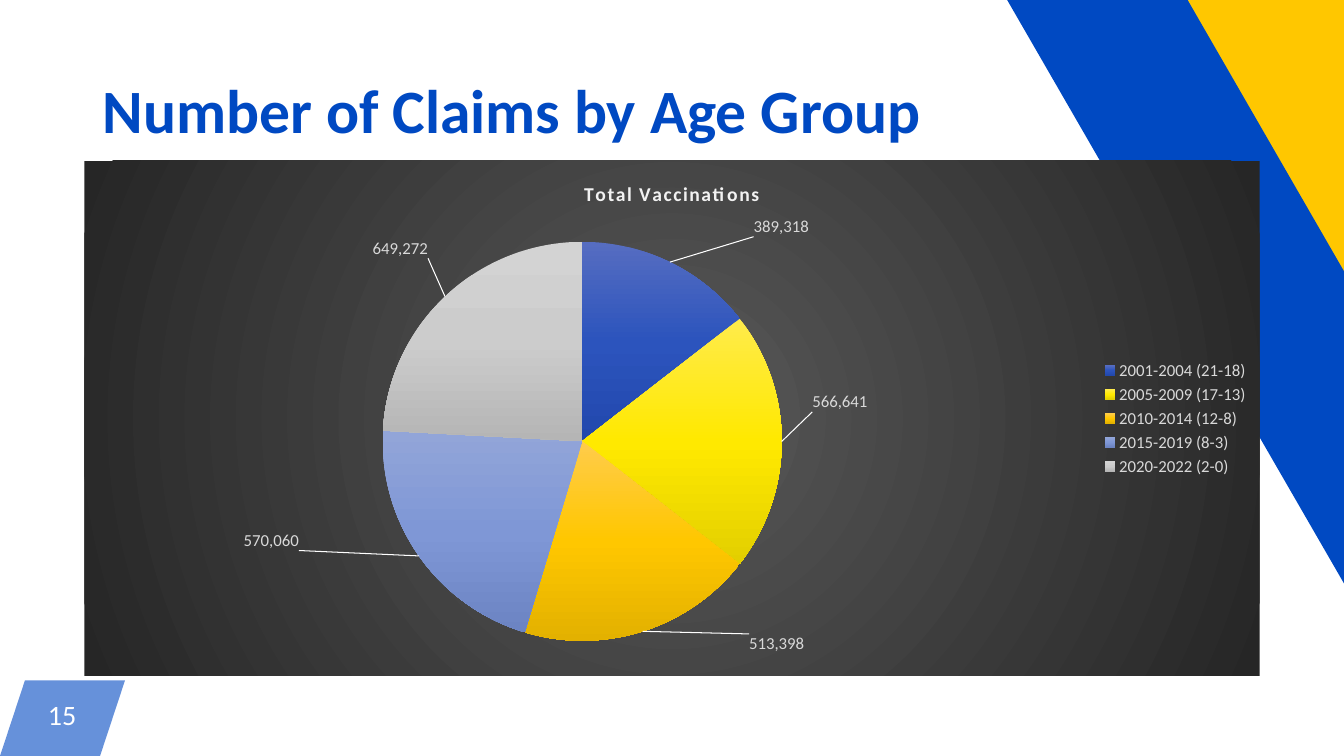
from lxml import etree
from pptx import Presentation
from pptx.chart.data import CategoryChartData
from pptx.dml.color import RGBColor
from pptx.enum.chart import XL_CHART_TYPE, XL_LABEL_POSITION, XL_LEGEND_POSITION
from pptx.enum.shapes import MSO_SHAPE
from pptx.enum.text import MSO_ANCHOR, PP_ALIGN
from pptx.oxml import parse_xml
from pptx.oxml.ns import nsdecls, qn
from pptx.util import Inches, Pt

PIE = XL_CHART_TYPE.PIE
BEST_FIT = XL_LABEL_POSITION.BEST_FIT
LEGEND_RIGHT = XL_LEGEND_POSITION.RIGHT
PARALLELOGRAM = MSO_SHAPE.PARALLELOGRAM
MIDDLE = MSO_ANCHOR.MIDDLE
LEFT, CENTER = PP_ALIGN.LEFT, PP_ALIGN.CENTER

BLUE = RGBColor(0x00, 0x49, 0xC2)
GOLD = RGBColor(0xFF, 0xC7, 0x00)
WHITE = RGBColor(0xFF, 0xFF, 0xFF)
HEADING_GRAY = RGBColor(0xF2, 0xF2, 0xF2)
LABEL_GRAY = RGBColor(0xD9, 0xD9, 0xD9)
BACKDROP = [(0, RGBColor(0x59, 0x59, 0x59)), (100, RGBColor(0x26, 0x26, 0x26))]
RADIAL = '<a:path path="circle"><a:fillToRect l="50000" t="50000" r="50000" b="50000"/></a:path>'
DOWNWARD = '<a:lin ang="5400000" scaled="0"/>'

AGE_GROUPS = [
    ("2001-2004 (21-18)", 389318, ("566DC1", "2C54BD", "2248AD"), (6.9, -3.9)),
    ("2005-2009 (17-13)", 566641, ("FFEB4B", "FFE900", "E3CF00"), (2.1, -7.7)),
    ("2010-2014 (12-8)", 513398, ("FFCC4B", "FFC700", "E3B100"), (8.9, -0.6)),
    ("2015-2019 (8-3)", 570060, ("92A5D8", "7F97D6", "6C84C3"), (-9.8, -5.6)),
    ("2020-2022 (2-0)", 649272, ("D3D3D3", "CCCCCC", "B5B5B5"), (-1.1, -6.6)),
]


def apply(target, values):
    """Set each named attribute on the target."""
    for name, value in values.items():
        setattr(target, name, value)


def gradient(stops, direction):
    """Return a gradient fill element for percent and colour stops."""
    marks = "".join(f'<a:gs pos="{at * 1000}"><a:srgbClr val="{color}"/></a:gs>' for at, color in stops)
    return parse_xml(f'<a:gradFill {nsdecls("a")} rotWithShape="1"><a:gsLst>{marks}</a:gsLst>{direction}</a:gradFill>')


def manual_layout(percents, inner=False):
    """Return a chart layout element from percent values."""
    target = '<c:layoutTarget val="inner"/><c:xMode val="edge"/><c:yMode val="edge"/>' if inner else ""
    sizes = "".join(f'<c:{key} val="{value / 100:.4f}"/>' for key, value in zip("xywh", percents))
    return parse_xml(f'<c:layout {nsdecls("c")}><c:manualLayout>{target}{sizes}</c:manualLayout></c:layout>')


class ClaimsSlide:
    """Hold the style and the slide, with lengths in percent of its size."""

    def __init__(self, deck):
        """Add a blank slide to the deck."""
        self.width, self.height = deck.slide_width, deck.slide_height
        self.shapes = deck.slides.add_slide(deck.slide_layouts[6]).shapes
        self.face = "Calibri"

    def place(self, *percents):
        """Turn alternating horizontal and vertical percents into lengths."""
        return [int(share * (self.height if i % 2 else self.width) / 100) for i, share in enumerate(percents)]

    def style_font(self, font, size, color, bold=False):
        """Apply the slide's typeface with a size and colour."""
        apply(font, {"name": self.face, "size": Pt(size), "bold": bold})
        font.color.rgb = color

    def paint(self, shape, color):
        """Give a shape a plain fill without line or shadow."""
        shape.shadow.inherit = False
        shape.fill.solid()
        shape.fill.fore_color.rgb = color
        shape.line.fill.background()

    def band(self, corners, color):
        """Draw a filled outline through the corners."""
        start, *rest = [self.place(*corner) for corner in corners]
        builder = self.shapes.build_freeform(*start, scale=1.0)
        builder.add_line_segments(rest, close=True)
        self.paint(builder.convert_to_shape(), color)

    def badge(self, area, color, opacity):
        """Draw a translucent slanted block."""
        block = self.shapes.add_shape(PARALLELOGRAM, *self.place(*area))
        block.adjustments[0] = 0.33
        self.paint(block, color)
        tint = block.fill._xPr.find(qn("a:solidFill"))[0]
        etree.SubElement(tint, qn("a:alpha")).set("val", str(opacity * 1000))

    def text(self, area, words, size, color, bold=False, align=LEFT, spacing=0.9, inset=0.1):
        """Write one line of vertically centred text."""
        frame = self.shapes.add_textbox(*self.place(*area)).text_frame
        apply(frame, {"word_wrap": True, "vertical_anchor": MIDDLE,
                      "margin_left": Inches(inset), "margin_right": Inches(inset)})
        line = frame.paragraphs[0]
        apply(line, {"alignment": align, "line_spacing": spacing})
        run = line.add_run()
        run.text = words
        self.style_font(run.font, size, color, bold)

    def pie(self, area, heading, groups, plot_area):
        """Draw a pie with gradient slices and placed labels."""
        data = CategoryChartData(number_format="#,##0")
        data.categories = [group[0] for group in groups]
        data.add_series("Series 1", [group[1] for group in groups])
        chart = self.shapes.add_chart(PIE, *self.place(*area), data).chart
        self.style_font(chart.font, 12, LABEL_GRAY)
        self.pie_frame(chart, heading, plot_area)
        self.pie_slices(chart.plots[0], groups)

    def pie_frame(self, chart, heading, plot_area):
        """Set the title, legend, backdrop and plot position."""
        title = chart.chart_title.text_frame.paragraphs[0].add_run()
        title.text = heading
        self.style_font(title.font, 14, HEADING_GRAY, bold=True)
        title.font._element.set("spc", "100")
        chart.has_legend = True
        apply(chart.legend, {"position": LEGEND_RIGHT, "include_in_layout": False})
        self.style_font(chart.legend.font, 12, LABEL_GRAY)
        root = chart._chartSpace
        backdrop = parse_xml(f'<c:spPr {nsdecls("c", "a")}><a:ln><a:noFill/></a:ln></c:spPr>')
        backdrop.insert(0, gradient(BACKDROP, RADIAL))
        root.find(qn("c:chart")).addnext(backdrop)
        plot = root.find(".//" + qn("c:plotArea"))
        for layout in plot.findall(qn("c:layout")):
            plot.remove(layout)
        plot.insert(0, manual_layout(plot_area, inner=True))

    def pie_slices(self, plot, groups):
        """Colour the slices and set their labels and leader lines."""
        plot.vary_by_categories = True
        series = plot.series[0]
        series.format.line.fill.background()
        labels = series.data_labels
        apply(labels, {"show_value": True, "number_format": "#,##0",
                       "number_format_is_linked": False, "position": BEST_FIT})
        self.style_font(labels.font, 12, LABEL_GRAY)
        for index, (_, _, shades, offset) in enumerate(groups):
            point = series.points[index]
            point.format.fill.solid()
            point.format.line.fill.background()
            solid = point.format.fill._xPr.find(qn("a:solidFill"))
            solid.getparent().replace(solid, gradient(zip((0, 50, 100), shades), DOWNWARD))
            point.data_label.position = BEST_FIT
            self.style_font(point.data_label.font, 12, LABEL_GRAY)
            label = series._element.findall(".//" + qn("c:dLbl"))[index]
            label.find(qn("c:idx")).addnext(manual_layout(offset))
        self.leader_lines(series._element.find(qn("c:dLbls")), WHITE)

    def leader_lines(self, labels, color):
        """Join the labels to their slices with thin lines."""
        switch = labels.find(qn("c:showLeaderLines"))
        if switch is None:
            switch = etree.SubElement(labels, qn("c:showLeaderLines"))
        switch.set("val", "1")
        switch.addnext(parse_xml(
            f'<c:leaderLines {nsdecls("c", "a")}><c:spPr><a:ln w="9525"><a:solidFill>'
            f'<a:srgbClr val="{color}"/></a:solidFill></a:ln></c:spPr></c:leaderLines>'))


def main():
    """Build the slide and save it."""
    deck = Presentation()
    apply(deck, {"slide_width": Inches(13.33), "slide_height": Inches(7.5)})
    slide = ClaimsSlide(deck)
    slide.badge((0, 90, 9.3, 10), BLUE, 60)
    slide.text((1.88, 90, 5.48, 10), "15", 20, WHITE, align=CENTER, spacing=Pt(17.7), inset=0.04)
    slide.band([(78.54, -28.93), (91.37, -42), (127.98, 71.47), (115.15, 84.4)], GOLD)
    slide.band([(71.04, -12), (81.1, -22.4), (117.85, 90.93), (107.8, 101.2)], BLUE)
    slide.text((6.9, 5.33, 86.25, 19.33), "Number of Claims by Age Group", 44, BLUE, bold=True)
    slide.pie((6.27, 21.28, 87.45, 68.13), "Total Vaccinations", AGE_GROUPS, (25.4, 15.7, 33.95, 77.5))
    deck.save("out.pptx")


if __name__ == "__main__":
    main()
